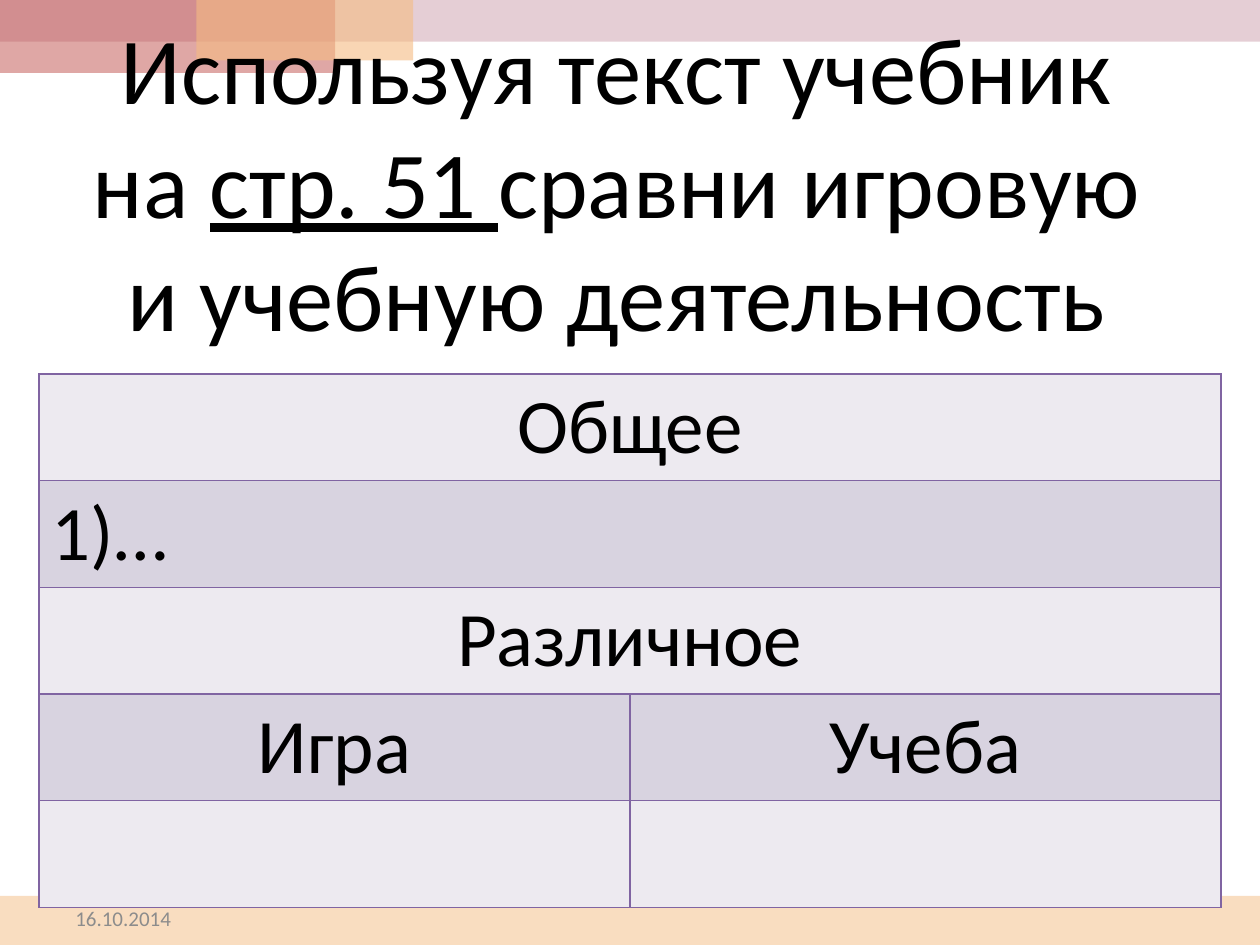
from lxml import etree
from pptx import Presentation
from pptx.dml.color import RGBColor
from pptx.enum import shapes, text
from pptx.oxml.ns import qn
from pptx.util import Cm, Pt


def color(value):
    return RGBColor.from_string(value)


def style(p, size, value, align):
    p.font.name = "Calibri"
    p.font.size = Pt(size)
    p.font.color.rgb = color(value)
    p.alignment = align


LEFT, CENTER = text.PP_ALIGN.LEFT, text.PP_ALIGN.CENTER

prs = Presentation()
prs.slide_width, prs.slide_height = Cm(25.4), Cm(19.05)
s = prs.slides.add_slide(prs.slide_layouts[6])

bands = [
    (0, 18.06, 25.4, 0.99, "F5BC83", 50),
    (0, 0, 25.4, 0.84, "CC9EAC", 50),
    (0, 0, 6.76, 1.47, "C0504D", 50),
    (3.96, 0, 4.37, 1.22, "F5BC83", 60),
]
for x, y, w, h, fill, opacity in bands:
    sp = s.shapes.add_shape(shapes.MSO_SHAPE.RECTANGLE, Cm(x), Cm(y), Cm(w), Cm(h))
    sp.shadow.inherit = False
    sp.line.fill.background()
    sp.fill.solid()
    sp.fill.fore_color.rgb = color(fill)
    clr = sp._element.spPr.find(".//" + qn("a:srgbClr"))
    etree.SubElement(clr, qn("a:alpha"), val=str(opacity * 1000))

title = s.shapes.add_textbox(Cm(1), Cm(0.14), Cm(22.86), Cm(7))
tf = title.text_frame
tf.word_wrap = True
tf.vertical_anchor = text.MSO_ANCHOR.MIDDLE
tf.margin_left = tf.margin_right = Cm(0.63)
tf.margin_top = tf.margin_bottom = 0
p = tf.paragraphs[0]
style(p, 54, "000000", CENTER)
for words, underline in [
    ("Используя текст учебник на ", False),
    ("стр. 51 ", True),
    ("сравни игровую и учебную деятельность", False),
]:
    r = p.add_run()
    r.text = words
    r.font.underline = underline

rows = [["Общее"], ["1)…"], ["Различное"], ["Игра", "Учеба"], ["", ""]]
row_height, col_width = 2.15, 11.91
table = s.shapes.add_table(
    len(rows), 2, Cm(0.79), Cm(7.54), Cm(2 * col_width), Cm(len(rows) * row_height)
).table
table.first_row = table.horz_banding = False
for col in table.columns:
    col.width = Cm(col_width)
for i, words in enumerate(rows):
    table.rows[i].height = Cm(row_height)
    if len(words) == 1:
        table.cell(i, 0).merge(table.cell(i, 1))
    for j in range(2):
        cell = table.cell(i, j)
        tcPr = cell._tc.get_or_add_tcPr()
        for side in ("lnL", "lnR", "lnT", "lnB"):
            ln = etree.SubElement(tcPr, qn("a:" + side), w=str(Pt(1)))
            solid = etree.SubElement(ln, qn("a:solidFill"))
            etree.SubElement(solid, qn("a:srgbClr"), val="8064A2")
        cell.fill.solid()
        cell.fill.fore_color.rgb = color("D8D3E0" if i % 2 else "EDEAF0")
        p = cell.text_frame.paragraphs[0]
        style(p, 44, "000000", LEFT if i == 1 else CENTER)
        if j < len(words) and words[j]:
            p.add_run().text = words[j]
        else:
            etree.SubElement(p._p, qn("a:endParaRPr"), sz="4400")

date = s.shapes.add_textbox(Cm(1.27), Cm(18.16), Cm(5.92), Cm(0.69))
tf = date.text_frame
tf.word_wrap = True
tf.vertical_anchor = text.MSO_ANCHOR.MIDDLE
p = tf.paragraphs[0]
p.text = "16.10.2014"
style(p, 12, "8C8C8C", LEFT)

prs.save("out.pptx")
